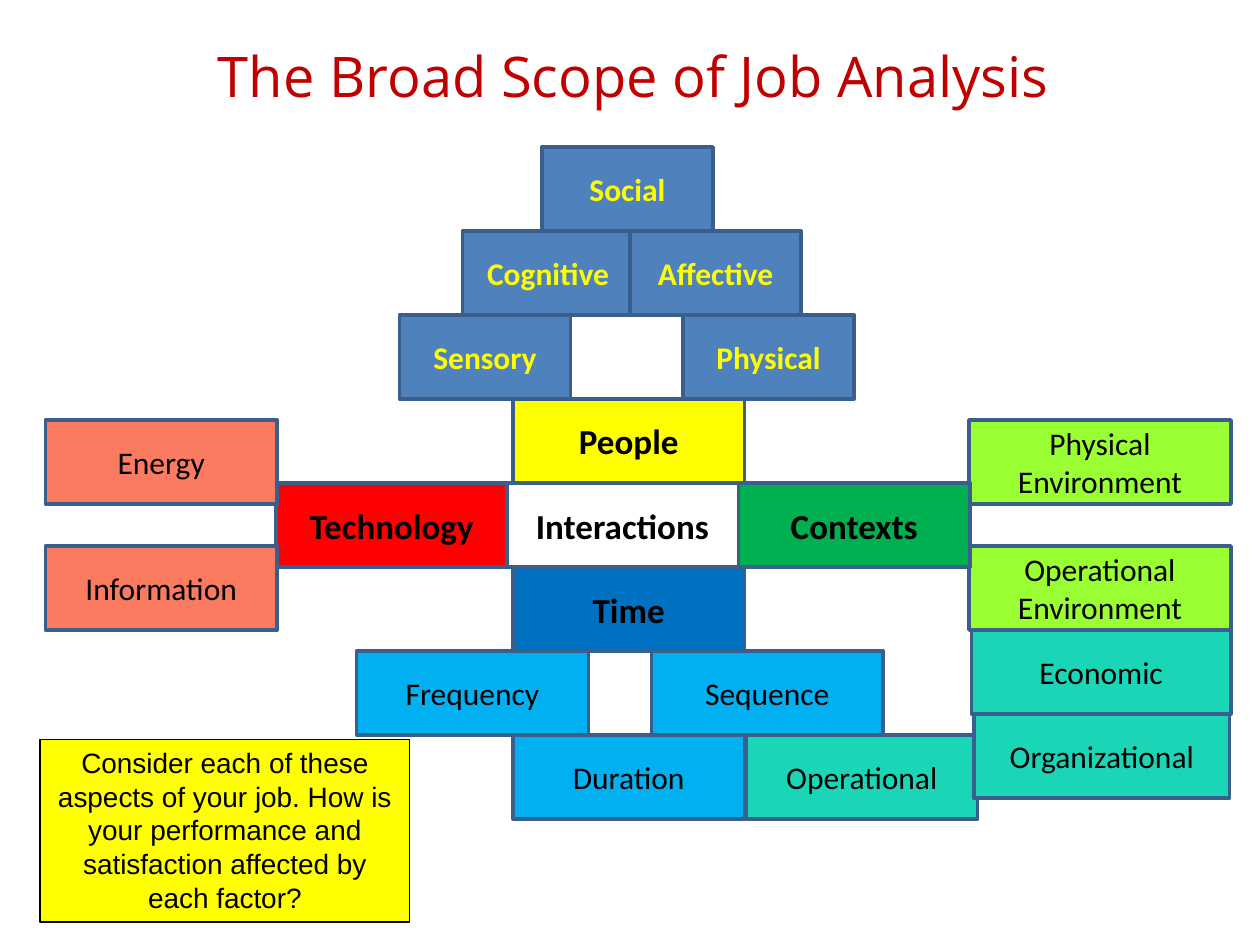
"""Build the slide on the broad scope of job analysis."""
from pptx import Presentation
from pptx.dml.color import RGBColor
from pptx.enum.shapes import MSO_SHAPE
from pptx.enum.text import MSO_ANCHOR, MSO_AUTO_SIZE, PP_ALIGN
from pptx.util import Inches, Pt

WIDTH, HEIGHT = 10, 7.5
COLUMN = WIDTH / 100
ROW = 2 / 3
FIRST_ROW = 7 / 6
NARROW, STANDARD, WIDE = 13.6, 18.4, 20.8
CENTRE = 40.7

HUB = {"size": 20, "bold": True}
PERSON = {"size": 18, "bold": True, "color": "FFFF00"}
FACTOR = {"size": 18}

# Each entry: fill, text format, then (label, column, row, width in columns).
GROUPS = [
    ("FFFF00", HUB, [("People", CENTRE, 3, STANDARD)]),
    ("4F81BD", PERSON, [
        ("Physical", 54.2, 2, NARROW),
        ("Sensory", 31.7, 2, NARROW),
        ("Cognitive", 36.7, 1, NARROW),
        ("Social", 43, 0, NARROW),
        ("Affective", 50, 1, NARROW),
    ]),
    ("99FF33", FACTOR, [
        ("Physical\nEnvironment", 76.9, 3.25, WIDE),
        ("Operational\nEnvironment", 76.9, 4.75, WIDE),
    ]),
    ("FF0000", HUB, [("Technology", 21.9, 4, STANDARD)]),
    ("00B050", HUB, [("Contexts", 58.6, 4, STANDARD)]),
    ("0070C0", HUB, [("Time", CENTRE, 5, STANDARD)]),
    ("FB7B61", FACTOR, [
        ("Information", 3.6, 4.75, STANDARD),
        ("Energy", 3.6, 3.25, STANDARD),
    ]),
    ("00B0F0", FACTOR, [
        ("Frequency", 28.3, 6, STANDARD),
        ("Sequence", 51.7, 6, STANDARD),
        ("Duration", CENTRE, 7, STANDARD),
    ]),
    (None, HUB, [("Interactions", 40.2, 4, STANDARD)]),
    ("1AD6B7", FACTOR, [
        ("Operational", 59.2, 7, STANDARD),
        ("Organizational", 77.3, 6.75, 20.3),
        ("Economic", 77.1, 5.75, 20.6),
    ]),
]

QUESTION = (
    "Consider each of these aspects of your job. How is your performance "
    "and satisfaction affected by each factor?"
)


def rgb(value):
    """Return the colour for a hex string."""
    return RGBColor.from_string(value)


def write(shape, text, *, size, font="Calibri", color="000000", bold=False,
          anchor=MSO_ANCHOR.MIDDLE):
    """Put centred text in a shape, one paragraph for each line."""
    frame = shape.text_frame
    frame.word_wrap = True
    frame.vertical_anchor = anchor
    for index, line in enumerate(text.split("\n")):
        para = frame.add_paragraph() if index else frame.paragraphs[0]
        para.alignment = PP_ALIGN.CENTER
        span = para.add_run()
        span.text = line
        span.font.name = font
        span.font.size = Pt(size)
        span.font.bold = bold
        span.font.color.rgb = rgb(color)


def add_box(page, left, top, width, height, fill, line="3A5F8C", weight=2):
    """Add an outlined rectangle, placed in inches, and return it."""
    box = page.shapes.add_shape(
        MSO_SHAPE.RECTANGLE, *map(Inches, (left, top, width, height)))
    box.shadow.inherit = False
    if fill:
        box.fill.solid()
        box.fill.fore_color.rgb = rgb(fill)
    else:
        box.fill.background()
    box.line.color.rgb = rgb(line)
    box.line.width = Pt(weight)
    return box


def add_title(page, text):
    """Move the title placeholder and fill it."""
    title = page.shapes.title
    title.left, title.top = Inches(0.082 * WIDTH), Inches(0.04 * HEIGHT)
    title.width, title.height = Inches(0.842 * WIDTH), Inches(0.08 * HEIGHT)
    write(title, text, size=32, font="Open Sans", color="C00000")
    title.text_frame.auto_size = MSO_AUTO_SIZE.NONE


def add_factors(page):
    """Add every labelled box of the factor diagram."""
    for fill, style, cells in GROUPS:
        for label, column, row, width in cells:
            box = add_box(page, column * COLUMN, FIRST_ROW + row * ROW,
                          width * COLUMN, ROW, fill)
            write(box, label, **style)


def add_question(page):
    """Add the question to the reader in the lower left corner."""
    box = add_box(page, 3.2 * COLUMN, 5.87, 29.3 * COLUMN, 1.45, "FFFF00",
                  line="000000", weight=1)
    write(box, QUESTION, size=16, font="Arial", anchor=MSO_ANCHOR.TOP)
    box.text_frame.auto_size = MSO_AUTO_SIZE.SHAPE_TO_FIT_TEXT


def main():
    """Build and save the deck."""
    deck = Presentation()
    deck.slide_width, deck.slide_height = Inches(WIDTH), Inches(HEIGHT)
    page = deck.slides.add_slide(deck.slide_layouts.get_by_name("Title Only"))
    add_title(page, "The Broad Scope of Job Analysis")
    add_factors(page)
    add_question(page)
    deck.save("out.pptx")


if __name__ == "__main__":
    main()
